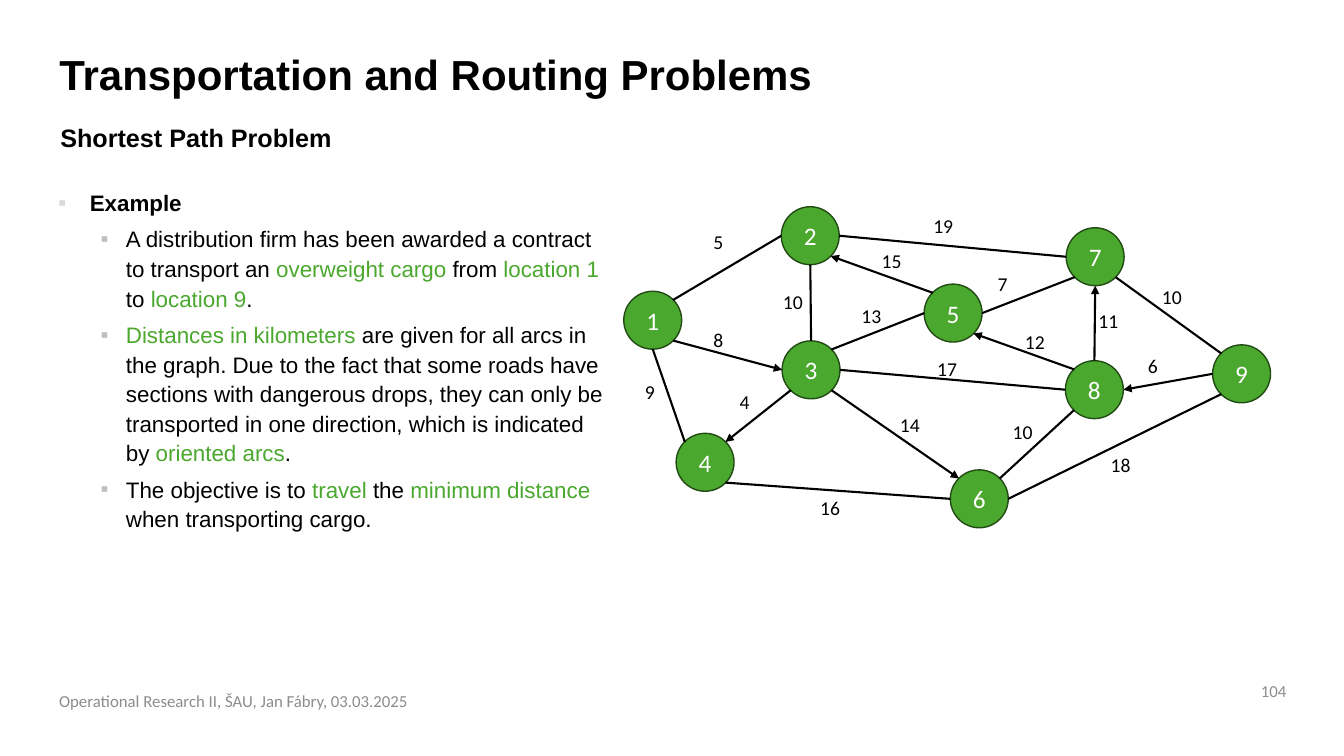
from lxml.etree import SubElement
from pptx import Presentation
from pptx.dml.color import RGBColor
from pptx.enum.shapes import MSO_CONNECTOR as Connector, MSO_SHAPE as Shape
from pptx.enum.text import MSO_ANCHOR as Anchor, MSO_AUTO_SIZE as AutoSize, PP_ALIGN as Align
from pptx.oxml.ns import qn
from pptx.util import Cm, Pt

BLACK, GREEN, DARK_GREEN, GREY, WHITE = "000000", "4BA82E", "214A14", "8C8C8C", "FFFFFF"


def style(font, name, size, color, bold=False):
    font.name, font.size, font.bold = name, Pt(size), bold
    font.color.rgb = RGBColor.from_string(color)


def add_text(box, text, name, size, color, bold=False, wrap=True):
    """Add a text box at (left, top, width, height) in centimetres."""
    shape = slide.shapes.add_textbox(*map(Cm, box))
    shape.text_frame.word_wrap = wrap
    shape.text_frame.text = text
    style(shape.text_frame.paragraphs[0].runs[0].font, name, size, color, bold)
    return shape


presentation = Presentation()
presentation.slide_width, presentation.slide_height = Cm(33.87), Cm(19.05)
slide = presentation.slides.add_slide(presentation.slide_layouts[1])

# Title and subtitle
title = slide.shapes.title
title.left, title.top, title.width, title.height = Cm(1.24), Cm(1.24), Cm(25.73), Cm(1.45)
title.text_frame.text = "Transportation and Routing Problems"
title.text_frame.vertical_anchor = Anchor.TOP
title.text_frame.auto_size = AutoSize.NONE
title_paragraph = title.text_frame.paragraphs[0]
title_paragraph.alignment = Align.LEFT
title_paragraph.line_spacing = 0.9
style(title_paragraph.runs[0].font, "Arial", 30, BLACK, True)
add_text((1.27, 2.97, 25.68, 1.02), "Shortest Path Problem", "Arial", 18, BLACK, True)

# Example: text between asterisks is green
example = [
    "Example",
    "A distribution firm has been awarded a contract to transport an *overweight cargo* from "
    "*location 1* to *location 9*.",
    "*Distances in kilometers *are given for all arcs in the graph. Due to the fact that some "
    "roads have sections with dangerous drops, they can only be transported in one direction, "
    "which is indicated by *oriented arcs*.",
    "The objective is to *travel* the *minimum distance* when transporting cargo.",
]
body = slide.placeholders[1]
body.left, body.top, body.width, body.height = Cm(1.22), Cm(4.57), Cm(14.33), Cm(10.49)
body.text_frame.auto_size = AutoSize.NONE
for index, text in enumerate(example):
    heading = index == 0
    paragraph = body.text_frame.paragraphs[0] if heading else body.text_frame.add_paragraph()
    paragraph.level = 0 if heading else 1
    paragraph.line_spacing = 1.1
    paragraph.space_before = Pt(0 if heading else 5)
    margin, hanging, bullet_color = (0.79, 0.79, "D9D9D9") if heading else (1.7, 0.64, "BFBFBF")
    properties = paragraph._p.get_or_add_pPr()
    properties.set("marL", str(Cm(margin)))
    properties.set("indent", str(-Cm(hanging)))
    SubElement(SubElement(properties, qn("a:buClr")), qn("a:srgbClr"), val=bullet_color)
    SubElement(properties, qn("a:buFont"), typeface="Arial")
    SubElement(properties, qn("a:buChar"), char="▪")
    for part, words in enumerate(text.split("*")):
        if words:
            run = paragraph.add_run()
            run.text = words
            style(run.font, "Arial", 16, GREEN if part % 2 else BLACK, heading)

# Locations: left and top of each circle
DIAMETER = 1.46
locations = {
    1: (15.72, 7.34), 2: (19.69, 5.21), 3: (19.71, 8.59),
    4: (17.04, 10.92), 5: (23.29, 7.16), 6: (23.95, 11.84),
    7: (26.87, 5.74), 8: (26.85, 9.09), 9: (30.56, 8.69),
}
for number, (left, top) in locations.items():
    circle = slide.shapes.add_shape(Shape.OVAL, Cm(left), Cm(top), Cm(DIAMETER), Cm(DIAMETER))
    circle.shadow.inherit = False
    circle.fill.solid()
    circle.fill.fore_color.rgb = RGBColor.from_string(GREEN)
    circle.line.color.rgb = RGBColor.from_string(DARK_GREEN)
    circle.line.width = Pt(1)
    circle.text_frame.text = str(number)
    circle.text_frame.vertical_anchor = Anchor.MIDDLE
    circle.text_frame.paragraphs[0].alignment = Align.CENTER
    style(circle.text_frame.paragraphs[0].runs[0].font, "Calibri", 18, WHITE)

# Points on a circle by compass direction, as fractions of the diameter
NEAR, FAR = 0.15, 0.85
compass = {
    "N": (0.5, 0), "S": (0.5, 1), "W": (0, 0.5), "E": (1, 0.5),
    "NW": (NEAR, NEAR), "NE": (FAR, NEAR), "SW": (NEAR, FAR), "SE": (FAR, FAR),
}
# Start, its side, end, its side, oriented, distance, left and top of the label
arcs = [
    (7, "W", 2, "E", False, 19, 23.27, 5.26),
    (5, "W", 3, "NE", False, 13, 21.46, 7.54),
    (6, "W", 4, "SE", False, 16, 20.42, 12.37),
    (4, "NW", 1, "S", False, 9, 16.0, 9.45),
    (1, "NE", 2, "W", False, 5, 17.73, 5.66),
    (7, "SW", 5, "E", False, 7, 24.89, 6.73),
    (8, "W", 3, "E", False, 17, 23.37, 8.86),
    (9, "NW", 7, "SE", False, 10, 29.03, 7.06),
    (9, "SW", 6, "E", False, 18, 27.74, 11.3),
    (3, "N", 2, "S", False, 10, 19.48, 7.19),
    (6, "NE", 8, "SW", False, 10, 25.27, 10.46),
    (9, "W", 8, "E", True, 6, 28.68, 8.79),
    (8, "N", 7, "S", True, 11, 27.43, 7.67),
    (8, "NW", 5, "SE", True, 12, 25.58, 8.18),
    (5, "NW", 2, "SE", True, 15, 21.97, 6.15),
    (1, "SE", 3, "W", True, 8, 17.73, 8.15),
    (3, "SW", 4, "NE", True, 4, 18.39, 9.7),
    (3, "SE", 6, "NW", True, 14, 22.43, 10.29),
]
for start, start_side, end, end_side, oriented, distance, label_left, label_top in arcs:
    ends = [
        Cm(corner + fraction * DIAMETER)
        for location, side in ((start, start_side), (end, end_side))
        for corner, fraction in zip(locations[location], compass[side])
    ]
    arc = slide.shapes.add_connector(Connector.STRAIGHT, *ends)
    arc.line.color.rgb = RGBColor.from_string(BLACK)
    arc.line.width = Pt(1.5)
    if oriented:
        SubElement(arc.line._get_or_add_ln(), qn("a:tailEnd"), type="triangle")
    SubElement(arc._element.spPr, qn("a:effectLst"))
    label_width = 0.76 if distance < 10 else 1.03
    add_text((label_left, label_top, label_width, 0.86), str(distance), "Calibri", 14, BLACK, wrap=False)

# Footer and page number
footer = add_text((1.24, 17.15, 18.21, 1.02), "Operational Research II, ŠAU, Jan Fábry, 03.03.2025",
                  "Calibri", 12, GREY)
page_number = add_text((31.17, 16.99, 1.5, 0.84), "104", "Calibri", 12, GREY)
page_number.text_frame.paragraphs[0].alignment = Align.RIGHT
for shape in (footer, page_number):
    shape.text_frame.vertical_anchor = Anchor.MIDDLE

presentation.save("out.pptx")
